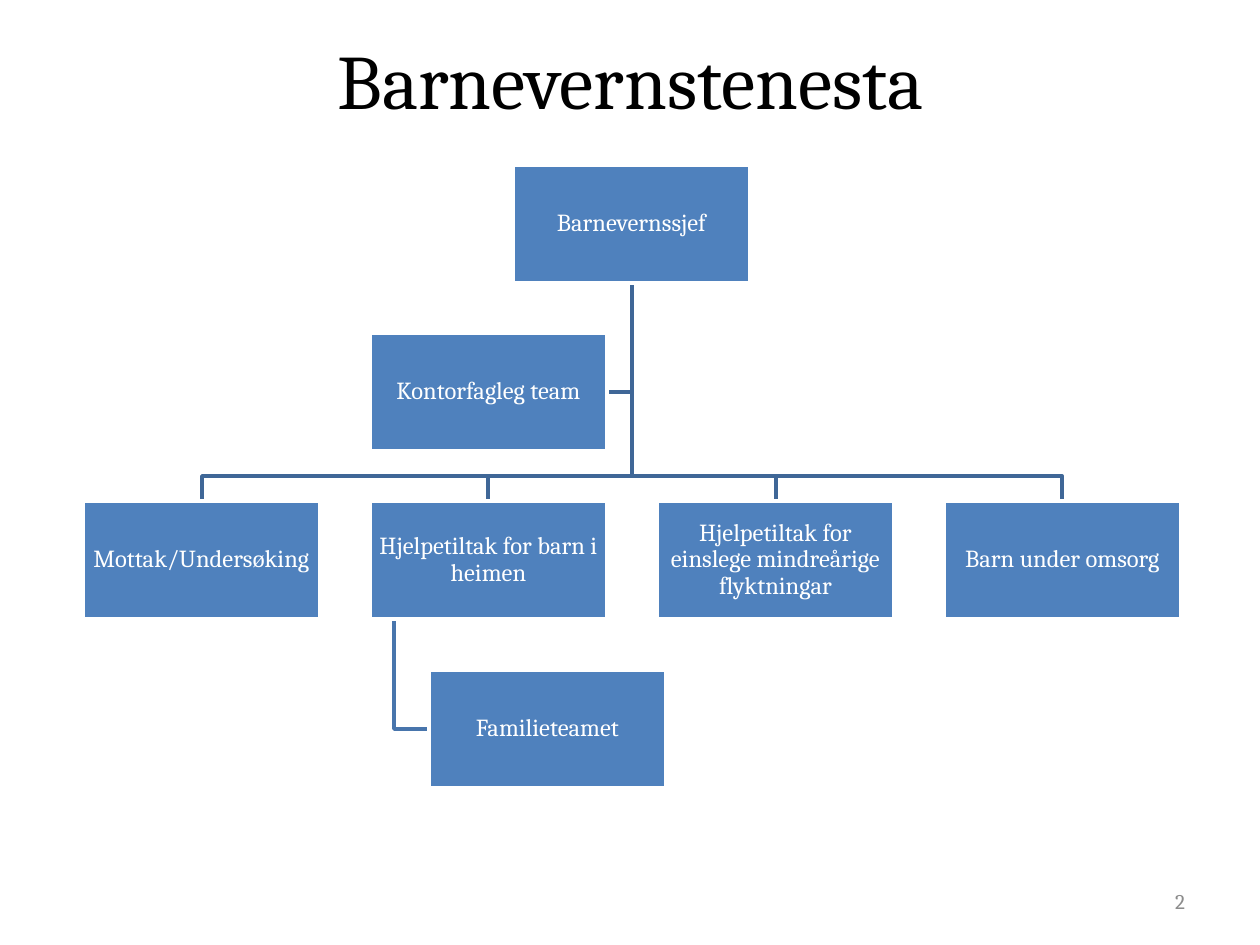
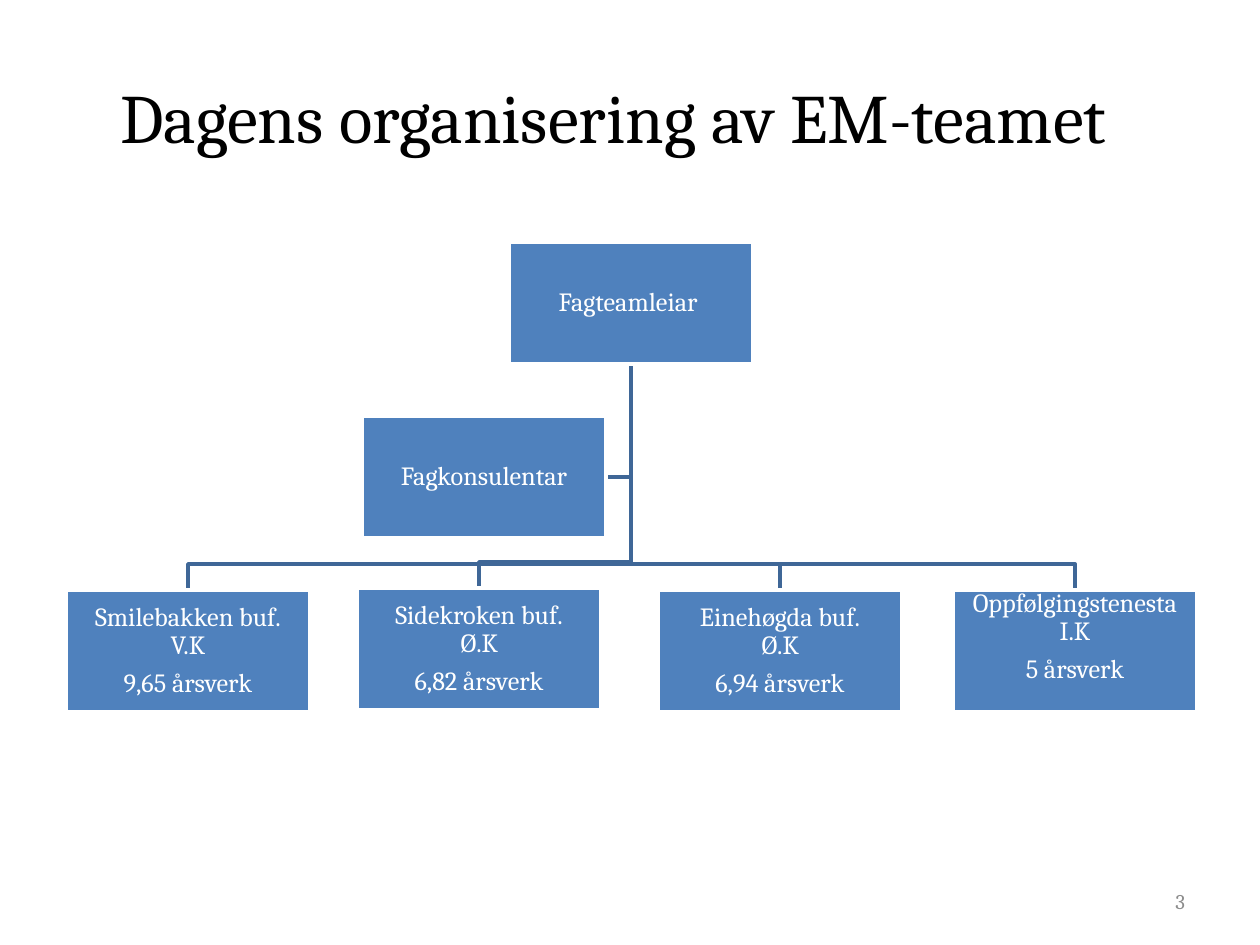
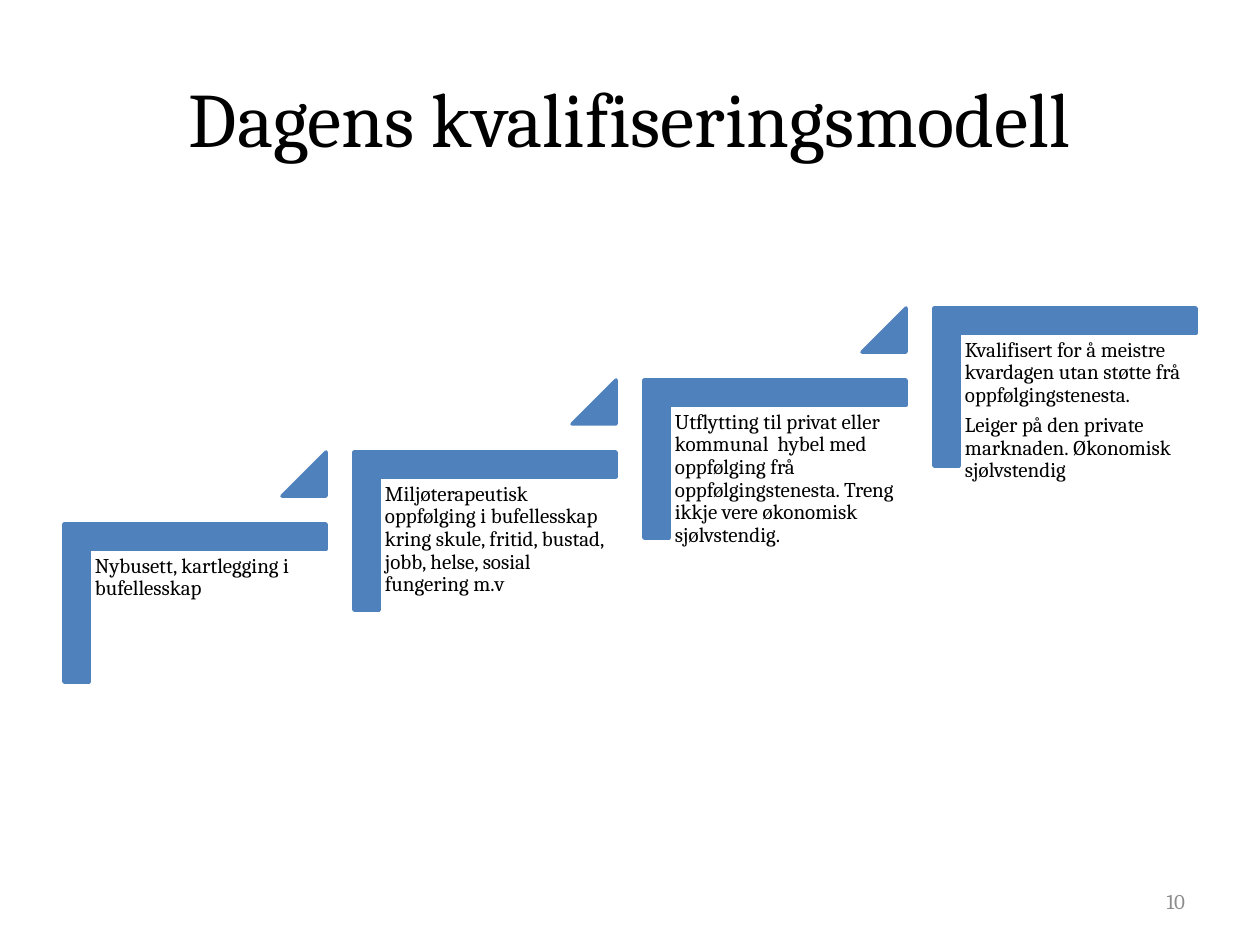
from copy import deepcopy
from dataclasses import dataclass

from pptx import Presentation
from pptx.dml.color import RGBColor
from pptx.enum.shapes import MSO_SHAPE
from pptx.enum.text import MSO_ANCHOR, MSO_AUTO_SIZE, PP_ALIGN
from pptx.util import Emu, Pt

RECTANGLE, CORNER, TRIANGLE = MSO_SHAPE.RECTANGLE, MSO_SHAPE.CORNER, MSO_SHAPE.ISOSCELES_TRIANGLE
LEFT, CENTER, RIGHT = PP_ALIGN.LEFT, PP_ALIGN.CENTER, PP_ALIGN.RIGHT
TOP, MIDDLE = MSO_ANCHOR.TOP, MSO_ANCHOR.MIDDLE
NO_AUTOFIT = MSO_AUTO_SIZE.NONE
PX = 914400 / 126
TITLE_ONLY = 5


@dataclass(frozen=True)
class Theme:
    font: str = "Cambria"
    ink: str = "000000"
    paper: str = "FFFFFF"
    blue: str = "4F81BD"
    branch: str = "3F6797"
    twig: str = "4875AC"
    grey: str = "8C8C8C"
    number_size: float = 12
    step_size: float = 12
    line_width: float = 2
    tight: float = 0.9
    paragraph_gap: float = 0.35


THEME = Theme()

SERVICE = {
    "title": ("Barnevernstenesta", 64, 0, 44),
    "number": "2",
    "box": (237, 118),
    "size": 14,
    "root": (513, 165, ["Barnevernssjef"]),
    "assistant": (370, 333, ["Kontorfagleg team"]),
    "reports": [
        (83 + 287 * column, 501, [name], 0)
        for column, name in enumerate([
            "Mottak/Undersøking",
            "Hjelpetiltak for barn i heimen",
            "Hjelpetiltak for einslege mindreårige flyktningar",
            "Barn under omsorg",
        ])
    ],
    "team": (1, 670, ["Familieteamet"]),
}

EM_TEAM = {
    "title": ("Dagens organisering av EM-teamet ", 54, 37, 39.6),
    "number": "3",
    "box": (244, 122),
    "size": 15,
    "root": (509, 242, ["Fagteamleiar "]),
    "assistant": (362, 416, ["Fagkonsulentar"]),
    "reports": [
        (66, 590, ["Smilebakken buf.\nV.K", "9,65 årsverk"], 0),
        (357, 588, ["Sidekroken buf.\nØ.K", "6,82 årsverk"], 0),
        (658, 590, ["Einehøgda buf.\nØ.K", "6,94 årsverk"], 0),
        (953, 590, ["Oppfølgingstenesta\nI.K", "5 årsverk"], 28),
    ],
    "team": None,
}

MODEL = {
    "title": ("Dagens kvalifiseringsmodell", 63, 38, 44),
    "number": "10",
    "steps": [
        ["Nybusett, kartlegging i bufellesskap"],
        ["Miljøterapeutisk oppfølging i bufellesskap kring skule, fritid, bustad, "
         "jobb, helse, sosial fungering m.v"],
        ["Utflytting til privat eller kommunal  hybel med oppfølging frå "
         "oppfølgingstenesta. Treng ikkje vere økonomisk sjølvstendig."],
        ["Kvalifisert for å meistre kvardagen utan støtte frå oppfølgingstenesta.",
         "Leiger på den private marknaden. Økonomisk sjølvstendig"],
    ],
}


def px(*values):
    return [Emu(round(value * PX)) for value in values]


def rgb(color):
    return RGBColor.from_string(color)


def write(frame, paragraphs, size, color=THEME.ink, align=LEFT, anchor=TOP,
          insets=(12, 6, 12, 6), spacing=None):
    frame.word_wrap = True
    frame.auto_size = NO_AUTOFIT
    frame.vertical_anchor = anchor
    (frame.margin_left, frame.margin_top,
     frame.margin_right, frame.margin_bottom) = px(*insets)
    for index, text in enumerate(paragraphs):
        para = frame.add_paragraph() if index else frame.paragraphs[0]
        para.alignment = align
        if spacing:
            para.line_spacing = spacing
        if index:
            para.space_before = Pt(round(size * THEME.paragraph_gap, 1))
        for row, line in enumerate(text.split("\n")):
            if row:
                para.add_line_break()
                line_break = para._p[-1]
            span = para.add_run()
            span.text = line
            span.font.name = THEME.font
            span.font.size = Pt(size)
            span.font.color.rgb = rgb(color)
            if row:
                line_break.append(deepcopy(span._r.rPr))


def outline(shape, color):
    shape.shadow.inherit = False
    shape.line.color.rgb = rgb(color)
    shape.line.width = Pt(THEME.line_width)


def add_block(page, preset, left, top, width, height, line=THEME.blue):
    block = page.shapes.add_shape(preset, *px(left, top, width, height))
    block.fill.solid()
    block.fill.fore_color.rgb = rgb(THEME.blue)
    outline(block, line)
    return block


def add_branch(page, points, color=THEME.branch):
    builder = page.shapes.build_freeform(*points[0], scale=PX)
    builder.add_line_segments(points[1:], close=False)
    branch = builder.convert_to_shape()
    branch.fill.background()
    outline(branch, color)


def add_page(deck, content):
    page = deck.slides.add_slide(deck.slide_layouts[TITLE_ONLY])
    text, left, top, size = content["title"]
    title = page.shapes.title
    title.left, title.top, title.width, title.height = px(left, top, 1134, 158)
    write(title.text_frame, [text], size, align=CENTER, anchor=MIDDLE)
    number = page.shapes.add_textbox(*px(903, 876, 294, 50))
    write(number.text_frame, [content["number"]], THEME.number_size,
          color=THEME.grey, align=RIGHT, anchor=MIDDLE)
    return page


def add_organisation(deck, content):
    page = add_page(deck, content)
    width, height = content["box"]
    root_left, root_top, root_text = content["root"]
    side_left, side_top, side_text = content["assistant"]
    reports = content["reports"]
    trunk, root_bottom = root_left + width / 2, root_top + height
    side_middle = side_top + height / 2
    boxes = [(root_left, root_top, root_text, 0), *reports,
             (side_left, side_top, side_text, 0)]

    add_branch(page, [(trunk, root_bottom), (trunk, side_middle),
                      (side_left + width, side_middle)])
    for left, top, _, _ in reports:
        bar, middle = top - height * 0.21, left + width / 2
        add_branch(page, [(trunk, root_bottom), (trunk, bar), (middle, bar), (middle, top)])

    if content["team"]:
        parent, team_top, team_text = content["team"]
        parent_left, parent_top, _, _ = reports[parent]
        team_left = parent_left + width // 4
        stem, team_middle = parent_left + width / 10, team_top + height / 2
        add_branch(page, [(stem, parent_top + height), (stem, team_middle),
                          (team_left, team_middle)], THEME.twig)
        boxes.append((team_left, team_top, team_text, 0))

    for left, top, text, lift in boxes:
        box = add_block(page, RECTANGLE, left, top, width, height, THEME.paper)
        write(box.text_frame, text, content["size"], color=THEME.paper, align=CENTER,
              anchor=MIDDLE, insets=(1, 1, 1, 1 + lift), spacing=THEME.tight)


def add_staircase(deck, content):
    page = add_page(deck, content)
    width, height, arm, marker = 262, 158, 25, 44
    run, rise = 290, 72
    steps = content["steps"]
    for index, text in enumerate(steps):
        left, top = 64 + run * index, 524 - rise * index
        turn = (width - height) / 2
        corner = add_block(page, CORNER, left + turn, top - turn, height, width)
        corner.rotation = 90
        corner.adjustments[0] = corner.adjustments[1] = 0.16
        label = page.shapes.add_textbox(*px(left + arm, top + arm, width - arm, 208))
        write(label.text_frame, text, THEME.step_size, insets=(6, 6, 6, 6),
              spacing=THEME.tight)
        if index < len(steps) - 1:
            triangle = add_block(page, TRIANGLE, left + width - marker, top - rise,
                                 marker, marker)
            triangle.adjustments[0] = 1


def main():
    deck = Presentation()
    deck.slide_width, deck.slide_height = px(1260, 945)
    add_organisation(deck, SERVICE)
    add_organisation(deck, EM_TEAM)
    add_staircase(deck, MODEL)
    deck.save("out.pptx")


if __name__ == "__main__":
    main()
